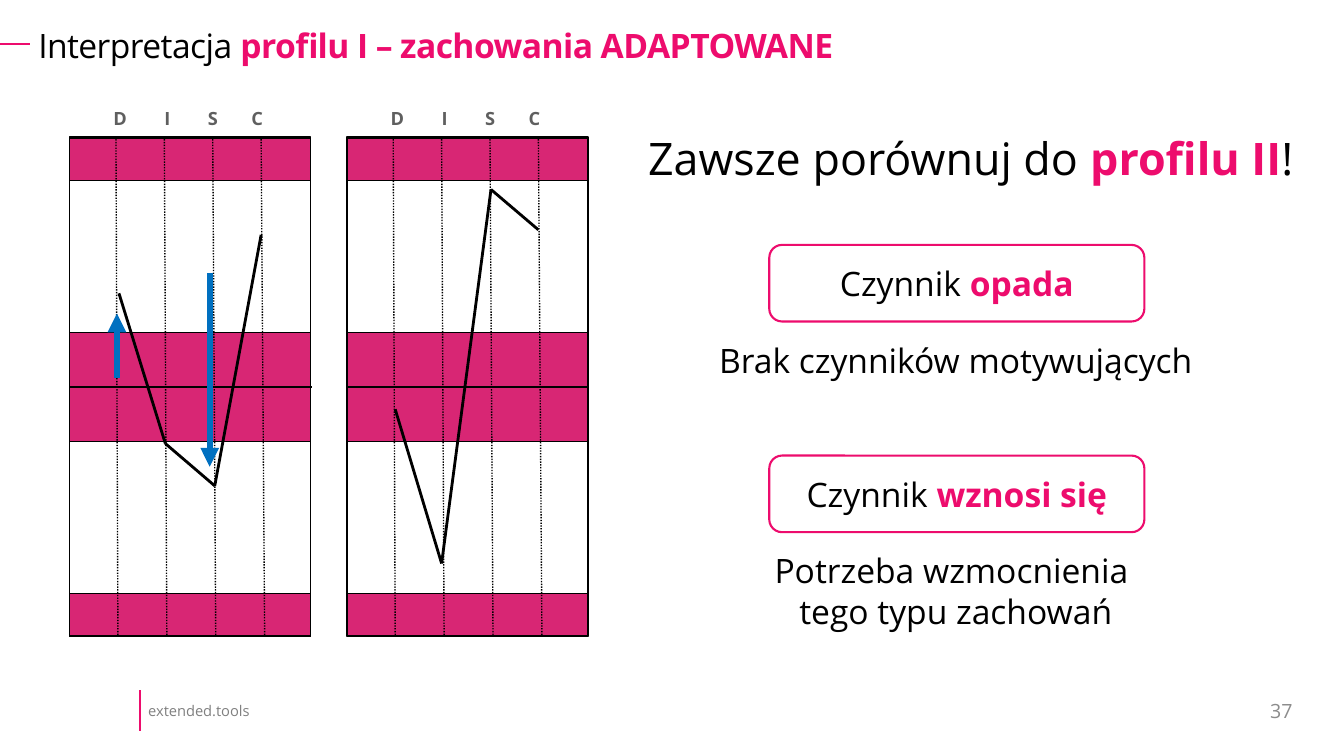
from itertools import pairwise

from lxml import etree
from pptx import Presentation
from pptx.dml.color import RGBColor
from pptx.enum.dml import MSO_LINE
from pptx.enum.shapes import MSO_CONNECTOR, MSO_SHAPE
from pptx.enum.text import MSO_ANCHOR, PP_ALIGN
from pptx.oxml.ns import qn
from pptx.util import Inches, Pt

STRAIGHT = MSO_CONNECTOR.STRAIGHT
DOTTED = MSO_LINE.ROUND_DOT
RECTANGLE = MSO_SHAPE.RECTANGLE
ROUNDED = MSO_SHAPE.ROUNDED_RECTANGLE
TOP, MIDDLE = MSO_ANCHOR.TOP, MSO_ANCHOR.MIDDLE
LEFT, CENTER, RIGHT = PP_ALIGN.LEFT, PP_ALIGN.CENTER, PP_ALIGN.RIGHT

FONT = "Open Sans"
PINK, BAND, BLUE = "ED0C6D", "D82674", "0070C0"
BLACK, WHITE = "000000", "FFFFFF"
LETTER_GRAY, FOOTER_GRAY, NUMBER_GRAY = "5F5F5F", "808080", "8C8C8C"

BANDS = [(0, 0.43), (1.94, 1.08), (4.53, 0.42)]
LETTER_TABS = [0.5, 0.97, 1.42, 1.86]
ADAPTED_PROFILE = [(0.49, 1.55), (0.95, 3.04), (1.44, 3.46), (1.9, 0.97)]
NATURAL_PROFILE = [(0.48, 2.7), (0.94, 4.23), (1.43, 0.52), (1.9, 0.92)]
SHIFT_ARROWS = [((1.39, 1.35), (1.39, 3.27)), ((0.47, 2.39), (0.47, 1.75))]


def color(value):
    return RGBColor.from_string(value)


def add_line(slide, start, end, line_color, width, dash=None, arrow=False):
    points = [Inches(value) for value in (*start, *end)]
    connector = slide.shapes.add_connector(STRAIGHT, *points)
    connector.line.color.rgb = color(line_color)
    connector.line.width = Pt(width)
    if dash:
        connector.line.dash_style = dash
    if arrow:
        outline = connector.line._get_or_add_ln()
        etree.SubElement(outline, qn("a:tailEnd"), type="triangle")
    etree.SubElement(connector._element.spPr, qn("a:effectLst"))


def add_box(slide, box, preset, fill, line_color, width):
    shape = slide.shapes.add_shape(preset, *(Inches(value) for value in box))
    shape.shadow.inherit = False
    if fill:
        shape.fill.solid()
        shape.fill.fore_color.rgb = color(fill)
    else:
        shape.fill.background()
    shape.line.color.rgb = color(line_color)
    shape.line.width = Pt(width)
    return shape


def write(shape, runs, size, align=LEFT, anchor=TOP, margins=(0.1, 0.05), tabs=(), line_spacing=None, tracking=0):
    frame = shape.text_frame
    across, down = (Inches(value) for value in margins)
    frame_format = {
        "word_wrap": True, "vertical_anchor": anchor,
        "margin_left": across, "margin_right": across,
        "margin_top": down, "margin_bottom": down,
    }
    for name, value in frame_format.items():
        setattr(frame, name, value)
    paragraph = frame.paragraphs[0]
    paragraph.alignment = align
    if line_spacing:
        paragraph.line_spacing = line_spacing
    if tabs:
        tab_list = etree.SubElement(paragraph._p.get_or_add_pPr(), qn("a:tabLst"))
        for position in tabs:
            etree.SubElement(tab_list, qn("a:tab"), pos=str(Inches(position)), algn="ctr")
    for text, text_color, bold in runs:
        for index, part in enumerate(text.split("\n")):
            if index:
                paragraph.add_line_break()
            run = paragraph.add_run()
            run.text = part
            run.font.color.rgb = color(text_color)
            for name, value in {"name": FONT, "size": Pt(size), "bold": bold}.items():
                setattr(run.font, name, value)
            if tracking:
                run._r.get_or_add_rPr().set("spc", str(tracking))


def add_text(slide, box, runs, size, **options):
    shape = slide.shapes.add_textbox(*(Inches(value) for value in box))
    write(shape, runs, size, **options)


def add_header(slide, left, top, width, height):
    add_line(slide, (0, top + 0.19), (left, top + 0.19), PINK, 1.5)
    runs = [("Interpretacja ", BLACK, False), ("profilu I – zachowania ADAPTOWANE", PINK, True)]
    add_text(slide, (left, top, width, height), runs, 24,
             margins=(0.08, 0.04), line_spacing=0.9, tracking=-40)


def add_profile_chart(slide, left, top, width, height, profile, arrows=()):
    def place(point):
        return left + point[0], top + point[1]

    for offset, band_height in BANDS:
        add_box(slide, (left, top + offset, width, band_height), RECTANGLE, BAND, BLACK, 1)
    add_text(slide, (left, top - 0.4, width, 0.43), [("\tD\tI\tS\tC", LETTER_GRAY, True)], 13,
             anchor=MIDDLE, margins=(0.04, 0.02), tabs=[tab - 0.04 + 0.04 * 0 for tab in LETTER_TABS])
    add_box(slide, (left, top + 0.01, width, height), RECTANGLE, None, BLACK, 1)
    add_line(slide, place((0, 2.48)), place((width + 0.01, 2.48)), BLACK, 1)
    for index in range(4):
        bottom_point = place((0.48 + 0.485 * index, height))
        top_point = place((0.46 + 0.48 * index, 0))
        add_line(slide, bottom_point, top_point, BLACK, 1, dash=DOTTED)
    for start, end in pairwise(profile):
        add_line(slide, place(start), place(end), BLACK, 2)
    for start, end in arrows:
        add_line(slide, place(start), place(end), BLUE, 4.5, arrow=True)


def add_factor(slide, left, top, width, height, change, meaning, meaning_height):
    shape = add_box(slide, (left + 0.71, top, width - 1.4, 0.76), ROUNDED, WHITE, PINK, 1.5)
    write(shape, [("Czynnik ", BLACK, False), (change, PINK, True)], 24, align=CENTER, anchor=MIDDLE)
    add_text(slide, (left, top + height - meaning_height, width, meaning_height),
             [(meaning, BLACK, False)], 24, align=CENTER)


def add_advice(slide, left, top, width):
    runs = [("Zawsze porównuj do ", BLACK, False), ("profilu II", PINK, True), ("!", BLACK, False)]
    add_text(slide, (left, top, width, 0.94), runs, 32)
    add_factor(slide, left + 0.59, top + 1.18, 5.12, 1.39, "opada", "Brak czynników motywujących", 0.5)
    add_factor(slide, left + 0.59, top + 3.27, 5.12, 1.8, "wznosi się",
               "Potrzeba wzmocnienia \ntego typu zachowań", 0.91)


def add_footer(slide, left, top, right, height):
    add_text(slide, (left - 0.05, top + 0.04, 1.72, 0.32), [("extended.tools", FOOTER_GRAY, False)],
             10.5, anchor=MIDDLE, margins=(0.13, 0.07))
    add_line(slide, (left, top), (left, top + height), PINK, 1.5)
    add_text(slide, (right - 1.26, top, 1.26, height), [("37", NUMBER_GRAY, False)],
             14, align=RIGHT, anchor=MIDDLE)


def main():
    presentation = Presentation()
    presentation.slide_width = Inches(13.33)
    presentation.slide_height = Inches(7.5)
    slide = presentation.slides.add_slide(presentation.slide_layouts[6])
    add_footer(slide, 1.39, 6.85, 12.92, 0.4)
    add_header(slide, 0.3, 0.25, 12.63, 0.45)
    add_profile_chart(slide, 0.69, 1.36, 2.39, 4.94, ADAPTED_PROFILE, SHIFT_ARROWS)
    add_profile_chart(slide, 3.44, 1.36, 2.39, 4.94, NATURAL_PROFILE)
    add_advice(slide, 6.33, 1.25, 6.63)
    presentation.save("out.pptx")


if __name__ == "__main__":
    main()
